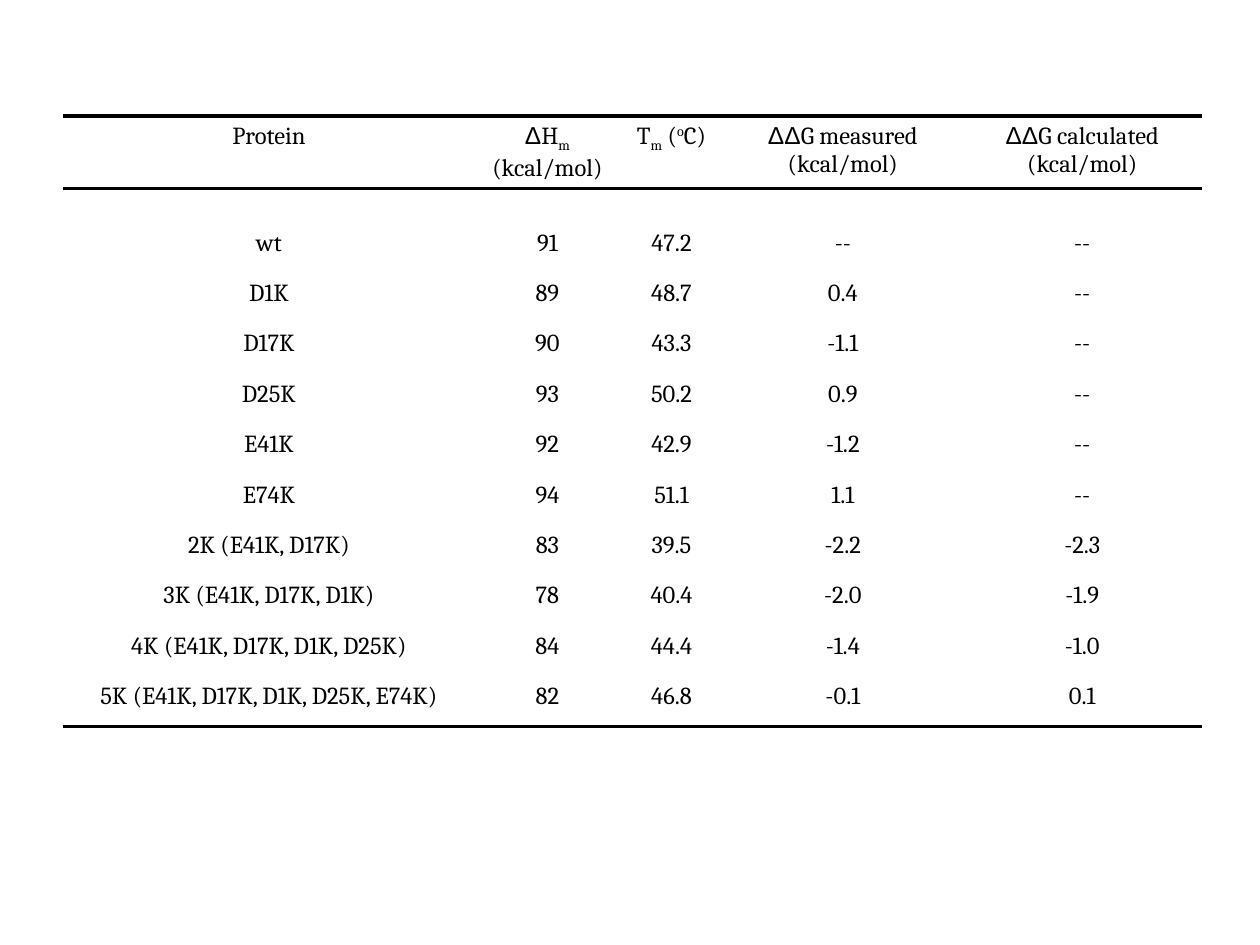
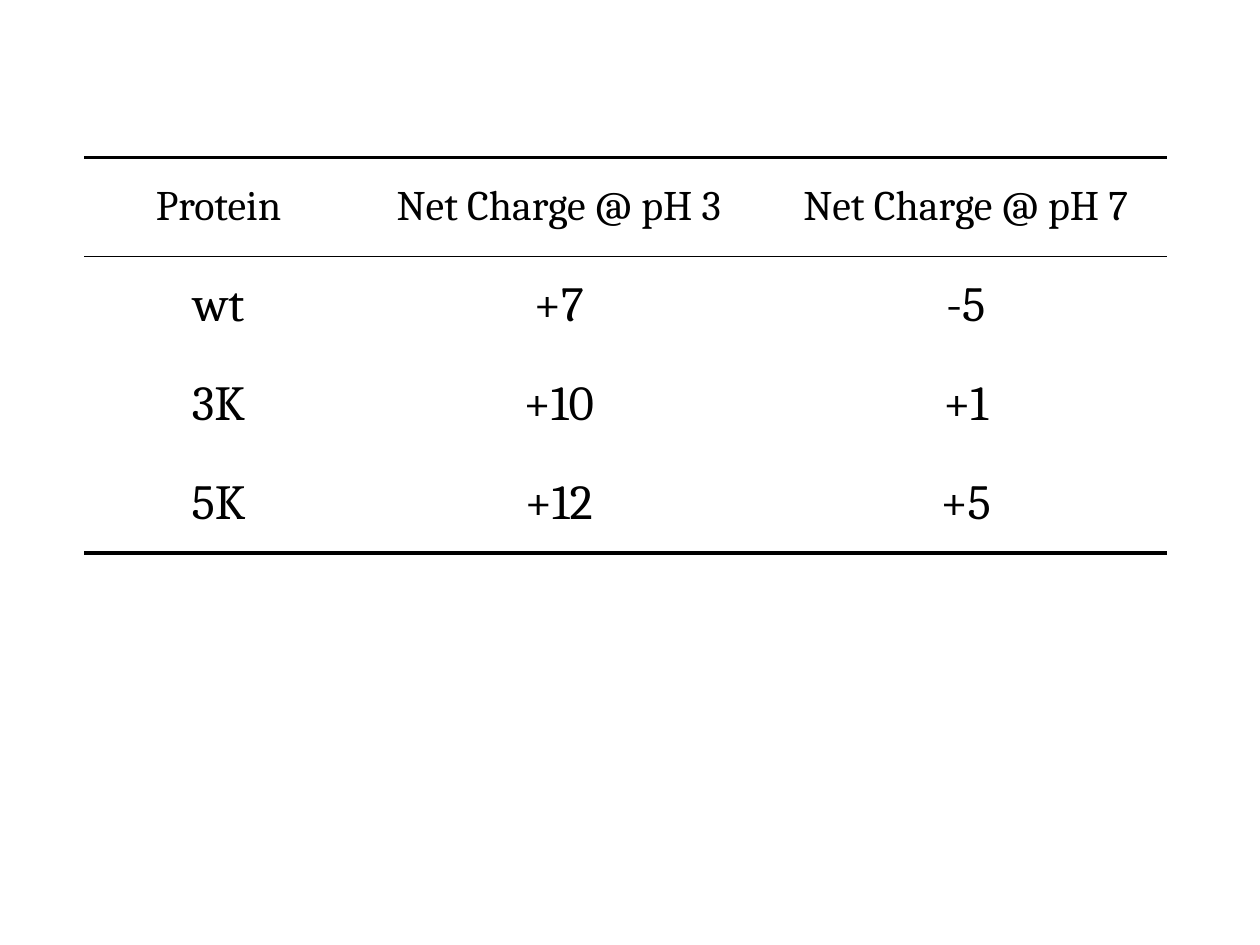
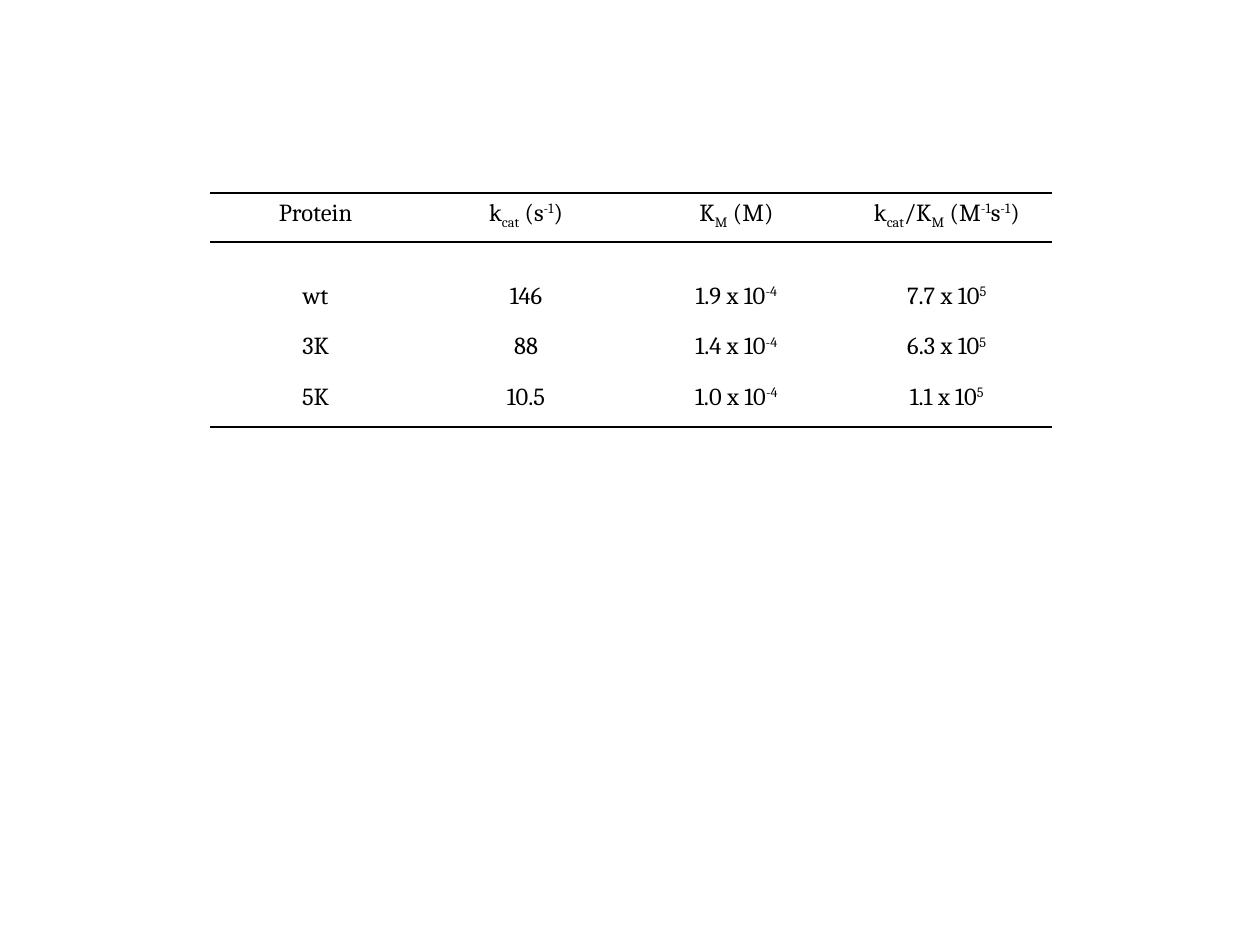
from lxml.etree import SubElement
from pptx import Presentation
from pptx.dml.color import RGBColor
from pptx.enum.text import MSO_ANCHOR, PP_ALIGN
from pptx.oxml import parse_xml
from pptx.oxml.ns import nsdecls, qn
from pptx.util import Inches, Pt

COLORS = {"text": "000000", "rule": "000000"}
FONT, GREEK_FONT = "Cambria", "Arial"
BASELINES = {"_": -25000, "^": 30000}
GREEK = "~"
SPACER_SIZE = 10


def write_text(tf, text, size=14, color="text", align=PP_ALIGN.CENTER):
    p = tf.paragraphs[0]
    p.alignment = align
    if not text:
        SubElement(p._p, qn("a:endParaRPr"), sz=str(SPACER_SIZE * 100))
        return
    for part in text.split("|"):
        mark = part[0] if part[0] in BASELINES or part[0] == GREEK else ""
        r = p.add_run()
        r.text = part[len(mark):]
        r.font.name = GREEK_FONT if mark == GREEK else FONT
        r.font.size = Pt(size)
        r.font.color.rgb = RGBColor.from_string(COLORS[color])
        if mark in BASELINES:
            r.font._element.set("baseline", str(BASELINES[mark]))


class Deck:
    def __init__(self):
        self.prs = Presentation()
        self.prs.slide_width, self.prs.slide_height = Inches(10), Inches(7.5)
        self.s = None

    def slide(self):
        self.s = self.prs.slides.add_slide(self.prs.slide_layouts[6])

    def borders(self, cell, top, bottom):
        tc_pr = cell._tc.get_or_add_tcPr()
        edges = (("L", None), ("R", None), ("T", top), ("B", bottom))
        for i, (edge, width) in enumerate(edges):
            if width:
                size = f' w="{Pt(width)}"'
                fill = f'<a:solidFill><a:srgbClr val="{COLORS["rule"]}"/></a:solidFill>'
            else:
                size, fill = "", "<a:noFill/>"
            line = f'<a:ln{edge} {nsdecls("a")}{size}>{fill}</a:ln{edge}>'
            tc_pr.insert(i, parse_xml(line))

    def table(self, left, top, widths, heights, rows, rules,
              head_size=14, body_size=14, anchor=MSO_ANCHOR.TOP):
        frame = self.s.shapes.add_table(
            len(rows), len(widths), Inches(left), Inches(top),
            Inches(sum(widths)), Inches(sum(heights)))
        table = frame.table
        table.first_row = table.horz_banding = False
        for column, width in zip(table.columns, widths):
            column.width = Inches(width)
        for i, (row, height, texts) in enumerate(zip(table.rows, heights, rows)):
            row.height = Inches(height)
            for cell, text in zip(row.cells, texts):
                cell.fill.background()
                cell.vertical_anchor = anchor
                write_text(cell.text_frame, text, size=body_size if i else head_size)
                self.borders(cell, rules.get(i), rules.get(i + 1))


def stability_slide(deck):
    rows = [
        ("Protein", "~Δ|H|_m| (kcal/mol)", "T|_m| (|^o|C)",
         "~ΔΔ|G measured (kcal/mol)", "~ΔΔ|G calculated (kcal/mol)"),
        ("",) * 5,
        ("wt", "91", "47.2", "--", "--"),
        ("D1K", "89", "48.7", "0.4", "--"),
        ("D17K", "90", "43.3", "-1.1", "--"),
        ("D25K", "93", "50.2", "0.9", "--"),
        ("E41K", "92", "42.9", "-1.2", "--"),
        ("E74K", "94", "51.1", "1.1", "--"),
        ("2K (E41K, D17K)", "83", "39.5", "-2.2", "-2.3"),
        ("3K (E41K, D17K, D1K)", "78", "40.4", "-2.0", "-1.9"),
        ("4K (E41K, D17K, D1K, D25K)", "84", "44.4", "-1.4", "-1.0"),
        ("5K (E41K, D17K, D1K, D25K, E74K)", "82", "46.8", "-0.1", "0.1"),
    ]
    deck.slide()
    deck.table(0.5, 0.92, [3.27, 1.15, 0.82, 1.9, 1.9], [0.57, 0.27] + [0.4] * 10,
               rows, {0: 2.25, 1: 2.25, 12: 2.25})


def charge_slide(deck):
    rows = [
        ("Protein", "Net Charge @ pH 3", "Net Charge @ pH 7"),
        ("wt", "+7", "-5"),
        ("3K", "+10", "+1"),
        ("5K", "+12", "+5"),
    ]
    deck.slide()
    deck.table(0.67, 1.25, [2.13, 3.27, 3.19], [0.785] * 4, rows,
               {0: 2.25, 1: 1, 4: 2.25}, head_size=24, body_size=28,
               anchor=MSO_ANCHOR.MIDDLE)


def kinetics_slide(deck):
    rows = [
        ("Protein", "k|_cat| (s|^-1|)", "K|_M| (M)", "k|_cat|/K|_M| (M|^-1|s|^-1|)"),
        ("",) * 4,
        ("wt", "146", "1.9 x 10|^-4", "7.7 x 10|^5"),
        ("3K", "88", "1.4 x 10|^-4", "6.3 x 10|^5"),
        ("5K", "10.5", "1.0 x 10|^-4", "1.1 x 10|^5"),
    ]
    deck.slide()
    deck.table(1.67, 1.53, [1.67] * 4, [0.39, 0.27] + [0.4] * 3,
               rows, {0: 1.5, 1: 1.5, 5: 1.5})


def main():
    deck = Deck()
    stability_slide(deck)
    charge_slide(deck)
    kinetics_slide(deck)
    deck.prs.save("out.pptx")


if __name__ == "__main__":
    main()
